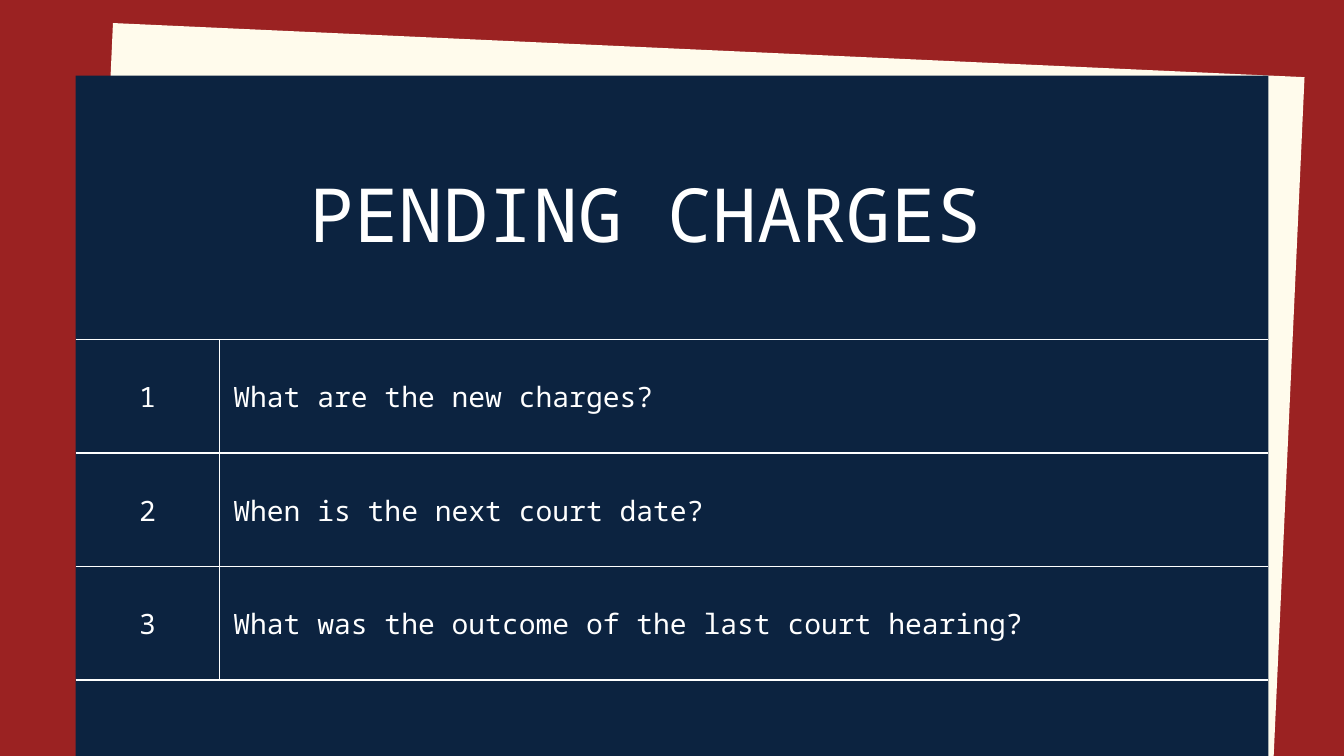
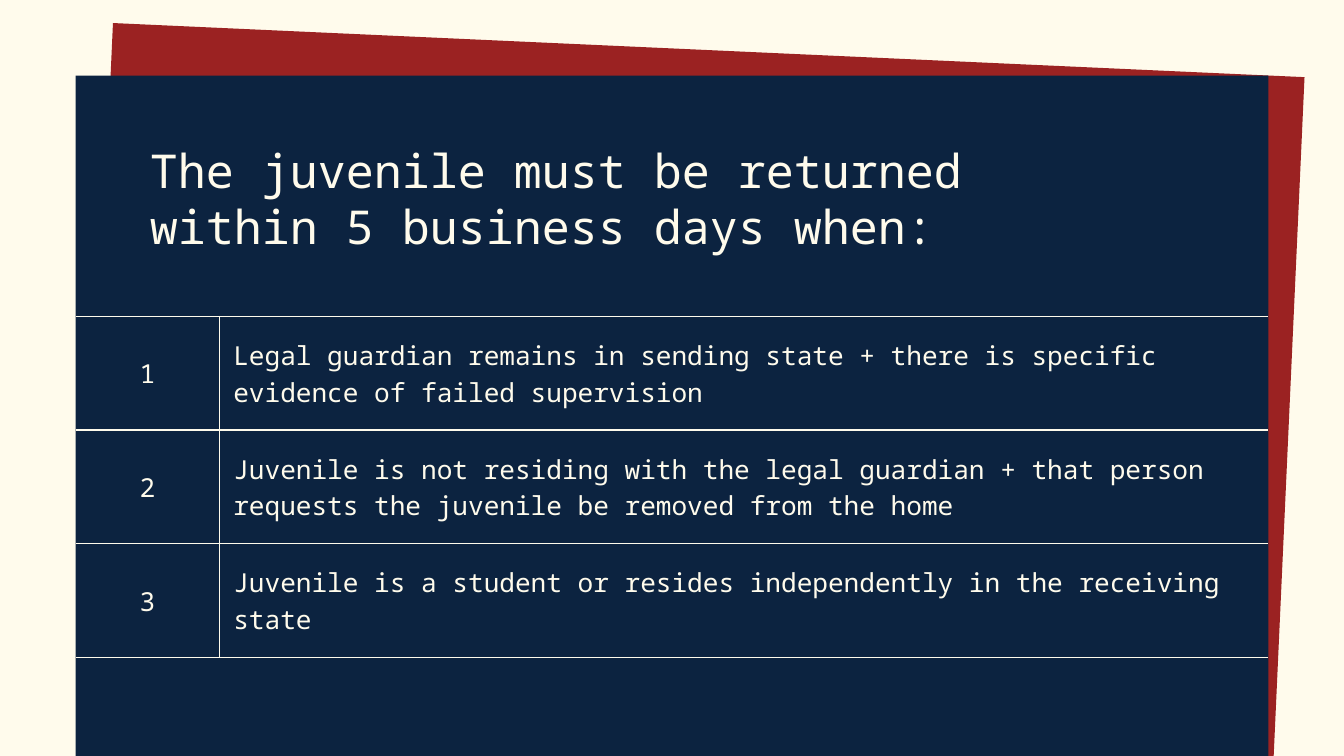
from pptx import Presentation
from pptx.dml.color import RGBColor
from pptx.enum import shapes, text
from pptx.oxml import parse_xml
from pptx.oxml.ns import nsdecls
from pptx.util import Pt

HUES = {"red": "9B2222", "cream": "FFFBEC", "navy": "0C2340", "white": "FFFFFF"}
FONT = "Noto Sans Mono"
WIDE, HIGH = 1440, 810
EDGE = 81
CARD = (EDGE, EDGE, WIDE - 2 * EDGE, HIGH - EDGE)
COLS = (154, CARD[2] - 154)
ROW = 121.68
PAD = 15
RULE = 1.5


def paint(fill, hue):
    fill.solid()
    fill.fore_color.rgb = RGBColor.from_string(HUES[hue])


def write(frame, words, size, lead, hue, align):
    frame.text = words
    for para in frame.paragraphs:
        para.alignment = align
        para.line_spacing = Pt(lead)
        for run in para.runs:
            run.font.name = FONT
            run.font.size = Pt(size)
            run.font.color.rgb = RGBColor.from_string(HUES[hue])


def add_sheet(slide, box, hue, turn=0):
    sheet = slide.shapes.add_shape(shapes.MSO_SHAPE.RECTANGLE, *map(Pt, box))
    sheet.shadow.inherit = False
    sheet.rotation = turn
    paint(sheet.fill, hue)
    sheet.line.fill.background()


def add_back(slide, ground, paper):
    paint(slide.background.fill, ground)
    left, top, wide, high = CARD
    add_sheet(slide, (left + 21.24, top - 27.72, wide, high + 71), paper, 2.6)
    add_sheet(slide, CARD, "navy")


def add_rules(cell, hue, sides):
    props = cell._tc.get_or_add_tcPr()
    for side in "LRTB":
        if side in sides:
            fill = f'<a:solidFill><a:srgbClr val="{HUES[hue]}"/></a:solidFill>'
        else:
            fill = "<a:noFill/>"
        props.append(parse_xml(
            f'<a:ln{side} {nsdecls("a")} w="{Pt(RULE)}">{fill}</a:ln{side}>'))


def add_list(slide, drop, items, size, hue):
    left, top, wide, _ = CARD
    box = (left, top + drop, wide, ROW * len(items))
    grid = slide.shapes.add_table(len(items), 2, *map(Pt, box)).table
    grid.first_row = grid.horz_banding = False
    for col, span in zip(grid.columns, COLS):
        col.width = Pt(span)
    looks = ((text.PP_ALIGN.CENTER, "RTB"), (text.PP_ALIGN.LEFT, "LTB"))
    for num, item in enumerate(items):
        grid.rows[num].height = Pt(ROW)
        for col, words in enumerate((str(num + 1), item)):
            cell = grid.cell(num, col)
            align, sides = looks[col]
            write(cell.text_frame, words, size, size * 1.4, hue, align)
            cell.vertical_anchor = text.MSO_ANCHOR.MIDDLE
            cell.margin_left = cell.margin_right = Pt(PAD)
            cell.margin_top = cell.margin_bottom = Pt(PAD)
            add_rules(cell, hue, sides)
            cell.fill.background()


def add_title(slide, box, words, size, hue, align):
    title = slide.shapes.title
    slide.shapes._spTree.append(title._element)
    left, top, wide, high = box
    title.left, title.top = Pt(CARD[0] + left), Pt(CARD[1] + top)
    title.width, title.height = Pt(wide), Pt(high)
    frame = title.text_frame
    frame.margin_left = frame.margin_right = 0
    frame.margin_top = frame.margin_bottom = 0
    frame.word_wrap = True
    frame.auto_size = text.MSO_AUTO_SIZE.NONE
    frame.vertical_anchor = text.MSO_ANCHOR.TOP
    write(frame, words, size, size * 1.2, hue, align)


def add_page(deck, ground, paper, ink, head, rows):
    slide = deck.slides.add_slide(deck.slide_layouts[5])
    add_back(slide, ground, paper)
    add_list(slide, hue=ink, **rows)
    add_title(slide, hue=ink, **head)


def main():
    deck = Presentation()
    deck.slide_width, deck.slide_height = Pt(WIDE), Pt(HIGH)
    add_page(
        deck, "red", "cream", "white",
        dict(box=(61.5, 99, 1098, 96.5), words="PENDING CHARGES",
             size=80, align=text.PP_ALIGN.CENTER),
        dict(drop=282.6, size=30, items=(
            "What are the new charges?",
            "When is the next court date?",
            "What was the outcome of the last court hearing?")))
    add_page(
        deck, "cream", "red", "cream",
        dict(box=(79.5, 71, 901.5, 120),
             words="The juvenile must be returned within 5 business days when:",
             size=50, align=text.PP_ALIGN.LEFT),
        dict(drop=258.12, size=28, items=(
            "Legal guardian remains in sending state + there is specific "
            "evidence of failed supervision",
            "Juvenile is not residing with the legal guardian + that person "
            "requests the juvenile be removed from the home",
            "Juvenile is a student or resides independently in the receiving "
            "state")))
    deck.save("out.pptx")


if __name__ == "__main__":
    main()
